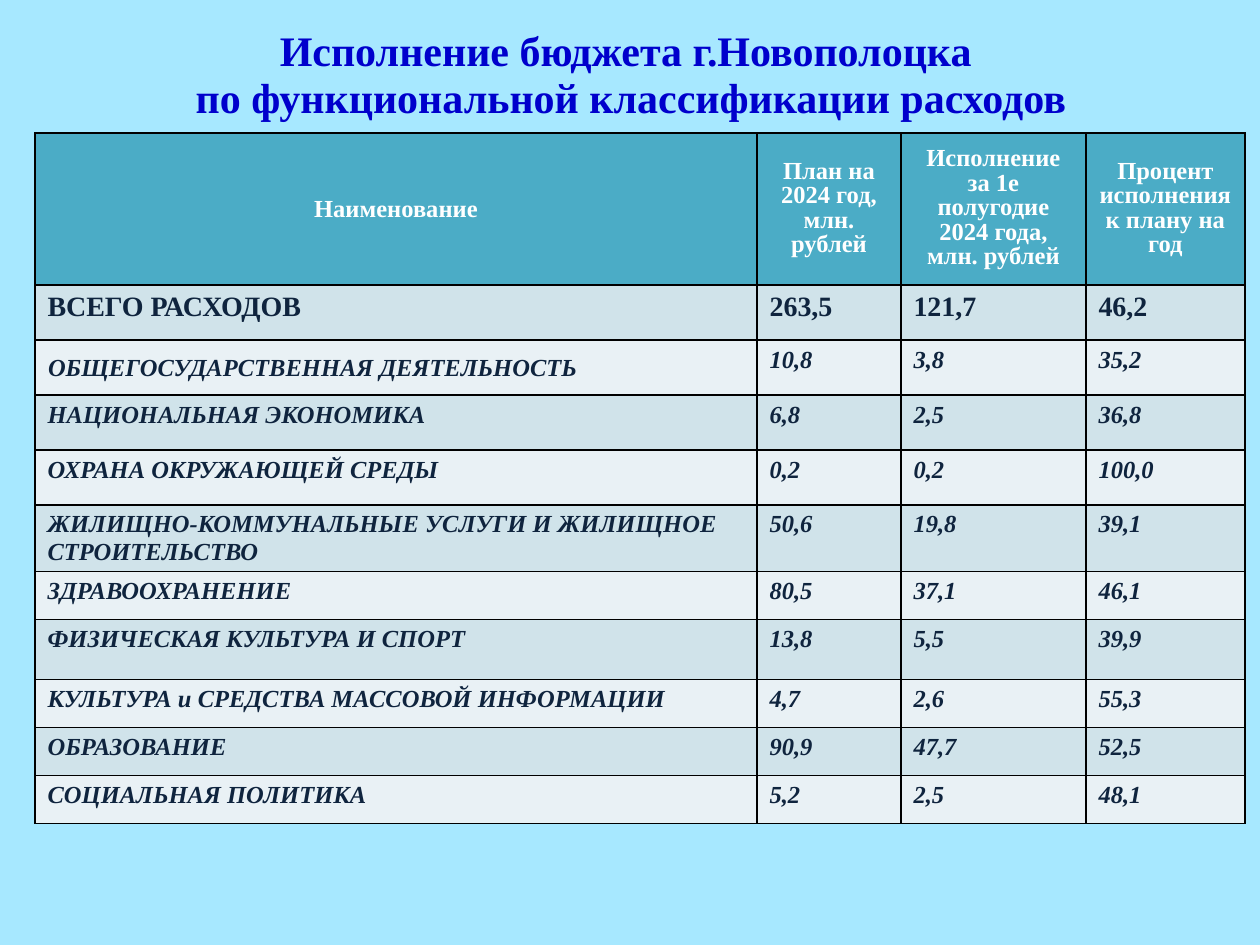
from lxml import etree
from pptx import Presentation
from pptx import util as u
from pptx.dml import color
from pptx.enum import text
from pptx.oxml import ns

COLORS = {
    "background": "A7E8FF",
    "title": "0000CC",
    "header": "4BACC6",
    "header_text": "FFFFFF",
    "odd": "D0E3EA",
    "even": "E9F1F5",
    "body_text": "0F243E",
    "border": "000000",
}
HEADINGS = [
    "Наименование",
    "План на 2024 год, млн. рублей",
    "Исполнение за 1е полугодие 2024 года, млн. рублей",
    "Процент исполнения к плану на год",
]
EXPENSES = [
    ("ВСЕГО РАСХОДОВ", "263,5", "121,7", "46,2"),
    ("ОБЩЕГОСУДАРСТВЕННАЯ ДЕЯТЕЛЬНОСТЬ", "10,8", "3,8", "35,2"),
    ("НАЦИОНАЛЬНАЯ ЭКОНОМИКА", "6,8", "2,5", "36,8"),
    ("ОХРАНА ОКРУЖАЮЩЕЙ СРЕДЫ", "0,2", "0,2", "100,0"),
    ("ЖИЛИЩНО-КОММУНАЛЬНЫЕ УСЛУГИ И ЖИЛИЩНОЕ СТРОИТЕЛЬСТВО", "50,6", "19,8", "39,1"),
    ("ЗДРАВООХРАНЕНИЕ", "80,5", "37,1", "46,1"),
    ("ФИЗИЧЕСКАЯ КУЛЬТУРА И СПОРТ", "13,8", "5,5", "39,9"),
    ("КУЛЬТУРА и СРЕДСТВА МАССОВОЙ ИНФОРМАЦИИ", "4,7", "2,6", "55,3"),
    ("ОБРАЗОВАНИЕ", "90,9", "47,7", "52,5"),
    ("СОЦИАЛЬНАЯ ПОЛИТИКА", "5,2", "2,5", "48,1"),
]
COLUMN_WIDTHS = [722, 144, 185, 159]
ROW_HEIGHTS = [152, 55, 55, 55, 55, 55, 48, 60, 48, 48, 48]


def px(length):
    return u.Emu(round(length * 914400 / 126))


def rgb(name):
    return color.RGBColor.from_string(COLORS[name])


def write(frame, content, *, font, size, ink, italic=False, align="LEFT", spacing=None):
    para = frame.paragraphs[0]
    para.alignment = text.PP_ALIGN[align]
    if spacing:
        para.line_spacing = u.Pt(spacing)
    for index, line in enumerate(content.split("\n")):
        if index:
            para.add_line_break()
        span = para.add_run()
        span.text = line
        span.font.name = font
        span.font.size = u.Pt(size)
        span.font.bold = True
        span.font.italic = italic
        span.font.color.rgb = rgb(ink)


class BudgetSlide:
    font = "Times New Roman"
    border_width = u.Pt(1)

    def __init__(self, deck):
        self.page = deck.slides.add_slide(deck.slide_layouts[5])
        fill = self.page.background.fill
        fill.solid()
        fill.fore_color.rgb = rgb("background")

    def title(self, content, left, top, width, height):
        box = self.page.shapes.title
        box.left, box.top, box.width, box.height = map(px, (left, top, width, height))
        frame = box.text_frame
        frame.auto_size = text.MSO_AUTO_SIZE.NONE
        frame.vertical_anchor = text.MSO_ANCHOR.MIDDLE
        write(frame, content, font=self.font, size=24, ink="title",
              align="CENTER", spacing=27)

    def border(self, cell):
        properties = cell._tc.get_or_add_tcPr()
        for side in ("a:lnL", "a:lnR", "a:lnT", "a:lnB"):
            line = etree.SubElement(properties, ns.qn(side), w=str(self.border_width))
            fill = etree.SubElement(line, ns.qn("a:solidFill"))
            etree.SubElement(fill, ns.qn("a:srgbClr"), val=COLORS["border"])

    def cell(self, cell, content, fill, **style):
        self.border(cell)
        cell.fill.solid()
        cell.fill.fore_color.rgb = rgb(fill)
        write(cell.text_frame, content, font=self.font, **style)

    def table(self, left, top, headings, records, widths, heights):
        box = self.page.shapes.add_table(
            len(heights), len(widths), px(left), px(top),
            px(sum(widths)), px(sum(heights)))
        table = box.table
        for column, width in zip(table.columns, widths):
            column.width = px(width)
        for row, height in zip(table.rows, heights):
            row.height = px(height)
        for index, heading in enumerate(headings):
            cell = table.cell(0, index)
            cell.vertical_anchor = text.MSO_ANCHOR.MIDDLE
            self.cell(cell, heading, "header", size=14, ink="header_text",
                      align="CENTER", spacing=14 if index else None)
        for number, record in enumerate(records, 1):
            total = number == 1
            for index, value in enumerate(record):
                self.cell(table.cell(number, index), value,
                          "odd" if number % 2 else "even",
                          size=16 if total else 14, ink="body_text", italic=not total)
        return table


def main():
    deck = Presentation()
    deck.slide_width, deck.slide_height = px(1260), px(945)
    slide = BudgetSlide(deck)
    slide.title("Исполнение бюджета г.Новополоцка \nпо функциональной классификации расходов",
                64, 16, 1134, 117)
    table = slide.table(35, 133, HEADINGS, EXPENSES, COLUMN_WIDTHS, ROW_HEIGHTS)
    government = table.cell(2, 0)
    government.vertical_anchor = text.MSO_ANCHOR.MIDDLE
    government.margin_left = px(13)
    government.margin_right = government.margin_top = px(1)
    government.margin_bottom = px(0)
    deck.save("out.pptx")


if __name__ == "__main__":
    main()
